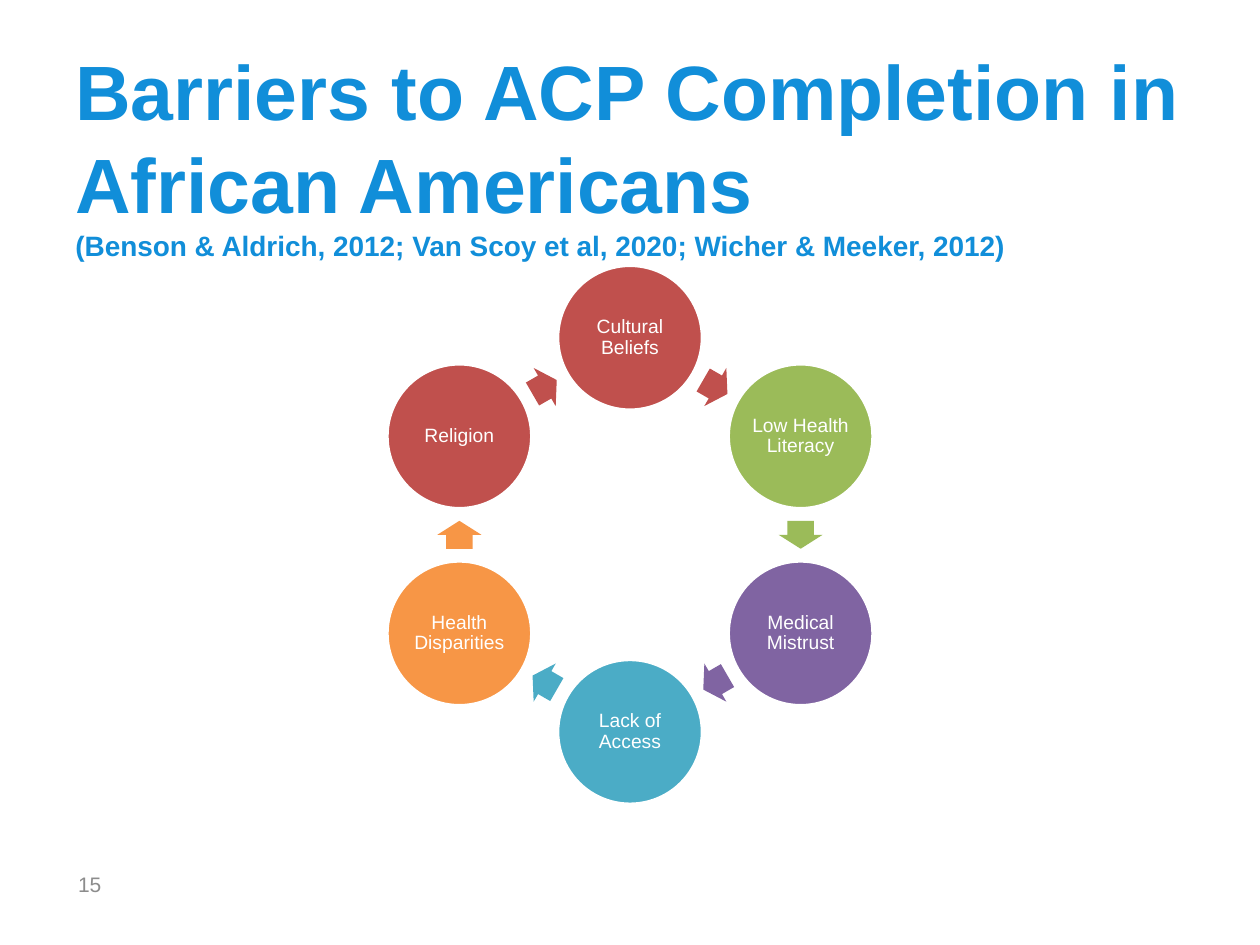
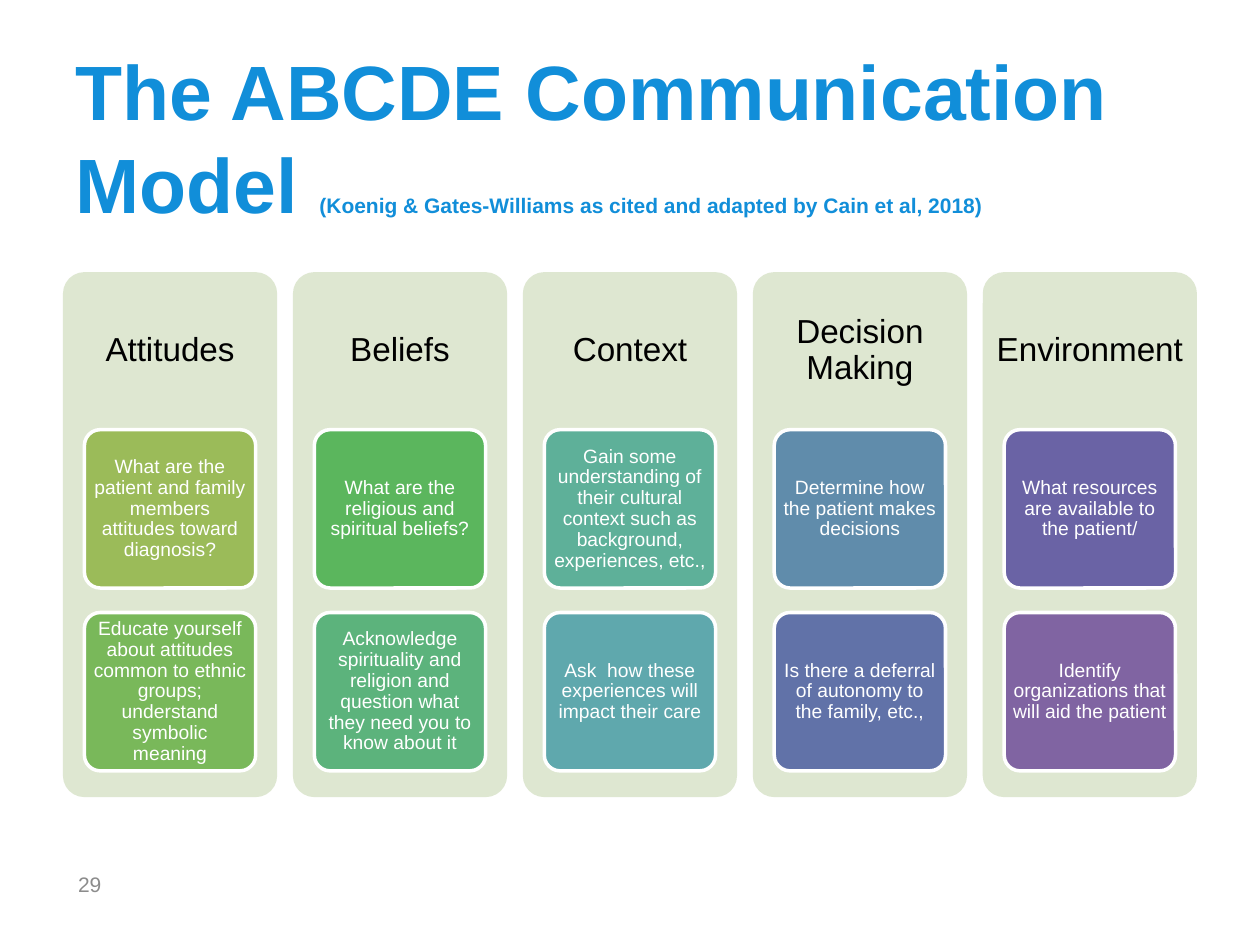
from math import cos, radians, sin

from pptx import Presentation
from pptx.dml.color import RGBColor
from pptx.enum.shapes import MSO_SHAPE
from pptx.enum.text import MSO_ANCHOR, PP_ALIGN
from pptx.util import Pt

ELLIPSE = MSO_SHAPE.OVAL
ARROW = MSO_SHAPE.RIGHT_ARROW
ROUNDED = MSO_SHAPE.ROUNDED_RECTANGLE
TOP, MIDDLE = MSO_ANCHOR.TOP, MSO_ANCHOR.MIDDLE
LEFT, CENTER = PP_ALIGN.LEFT, PP_ALIGN.CENTER

FONT = "Arial"
TITLE_BLUE = "118ED9"
NUMBER_GRAY = "8C8C8C"
COLUMN_GREEN = "DEE7D1"
WHITE, BLACK = "FFFFFF", "000000"

TITLE_BOX = (36, 21.6, 648, 158.4)
NUMBER_BOX = (37.5, 490.5, 37.5, 30)
RING_BOX = (221, 151.6, 278, 308)
COLUMNS_BOX = (36, 155.5, 648, 300)

BARRIERS = [
    ("Cultural Beliefs", "C0504D"),
    ("Low Health Literacy", "9BBB59"),
    ("Medical Mistrust", "8064A2"),
    ("Lack of Access", "4BACC6"),
    ("Health Disparities", "F79646"),
    ("Religion", "C0504D"),
]

ABCDE = [
    ("Attitudes", [
        ("What are the patient and family members attitudes toward diagnosis?", "9BBB59"),
        ("Educate yourself about attitudes common to ethnic groups; "
         "understand symbolic meaning", "79B85A")]),
    ("Beliefs", [
        ("What are the religious and spiritual beliefs?", "5BB65D"),
        ("Acknowledge spirituality and religion and question what "
         "they need you to know about it", "5CB37C")]),
    ("Context", [
        ("Gain some understanding of their cultural context such as "
         "background, experiences, etc.,", "5EB099"),
        ("Ask  how these experiences will impact their care", "5FA8AD")]),
    ("Decision Making", [
        ("Determine how the patient makes decisions", "608CAB"),
        ("Is there a deferral of autonomy to the family, etc.,", "6172A8")]),
    ("Environment", [
        ("What resources are available to the patient/", "6A63A5"),
        ("Identify organizations that will aid the patient", "8064A2")]),
]


def color(hex_string):
    return RGBColor.from_string(hex_string)


def points(box):
    return [Pt(round(length, 2)) for length in box]


def add_run(paragraph, text, size, hex_color, bold=False):
    run = paragraph.add_run()
    run.text = text
    run.font.name = FONT
    run.font.size = Pt(size)
    run.font.bold = bold
    run.font.color.rgb = color(hex_color)


def prepare_text(shape, anchor, align, spacing, insets):
    """Set up the text frame and return its first paragraph."""
    frame = shape.text_frame
    frame.word_wrap = True
    frame.vertical_anchor = anchor
    frame.margin_left = frame.margin_right = Pt(insets[0])
    frame.margin_top = frame.margin_bottom = Pt(insets[1])
    paragraph = frame.paragraphs[0]
    paragraph.alignment = align
    paragraph.line_spacing = spacing
    return paragraph


def add_filled_shape(slide, preset, box, fill, outlined=False):
    shape = slide.shapes.add_shape(preset, *points(box))
    shape.shadow.inherit = False
    shape.fill.solid()
    shape.fill.fore_color.rgb = color(fill)
    if outlined:
        shape.line.color.rgb = color(WHITE)
        shape.line.width = Pt(2)
    else:
        shape.line.fill.background()
    return shape


def add_labelled_shape(slide, preset, box, fill, label, side_inset):
    shape = add_filled_shape(slide, preset, box, fill, outlined=True)
    paragraph = prepare_text(shape, MIDDLE, CENTER, 0.9, (side_inset, 1))
    add_run(paragraph, label, 11, WHITE)
    return shape


def add_title(slide, box, title, citation, citation_size, break_before=False):
    text_box = slide.shapes.add_textbox(*points(box))
    paragraph = prepare_text(text_box, TOP, LEFT, 1.0, (7.2, 3.6))
    add_run(paragraph, title, 44, TITLE_BLUE, bold=True)
    if break_before:
        paragraph.add_line_break()
    add_run(paragraph, citation, citation_size, TITLE_BLUE, bold=True)


def add_slide_number(slide, box, number):
    text_box = slide.shapes.add_textbox(*points(box))
    paragraph = prepare_text(text_box, MIDDLE, LEFT, 1.0, (7.2, 3.6))
    add_run(paragraph, str(number), 12, NUMBER_GRAY)


def add_barrier_ring(slide, box, barriers):
    """Place circles clockwise from the top, with an arrow after each one."""
    left, top, width, height = box
    diameter = 82.8
    arrow_width, arrow_height = 16, 25.2
    radius = (height - diameter) / 2
    step = 360 / len(barriers)
    arrow_radius = radius * cos(radians(step / 2))

    def centered_box(angle, distance, box_width, box_height):
        center_x = left + width / 2 + distance * cos(radians(angle))
        center_y = top + height / 2 + distance * sin(radians(angle))
        return (center_x - box_width / 2, center_y - box_height / 2,
                box_width, box_height)

    for index, (label, fill) in enumerate(barriers):
        angle = index * step - 90
        circle_box = centered_box(angle, radius, diameter, diameter)
        add_labelled_shape(slide, ELLIPSE, circle_box, fill, label, 0.5)
        arrow_angle = angle + step / 2
        arrow_box = centered_box(arrow_angle, arrow_radius, arrow_width, arrow_height)
        arrow = add_filled_shape(slide, ARROW, arrow_box, fill)
        arrow.adjustments[0] = 0.6
        arrow.adjustments[1] = 0.5
        arrow.rotation = arrow_angle + 90


def add_column(slide, box, heading, cards):
    left, top, width, height = box
    column = add_filled_shape(slide, ROUNDED, box, COLUMN_GREEN)
    column.adjustments[0] = 0.1

    heading_height = 0.3 * height
    heading_box = slide.shapes.add_textbox(*points((left, top, width, heading_height)))
    paragraph = prepare_text(heading_box, MIDDLE, CENTER, 0.9, (5.7, 5.7))
    add_run(paragraph, heading, 19, BLACK)

    card_height, card_gap = 90.5, 14
    for index, (text, fill) in enumerate(cards):
        card_top = top + heading_height + index * (card_height + card_gap)
        card_box = (left + 0.1 * width, card_top, 0.8 * width, card_height)
        card = add_labelled_shape(slide, ROUNDED, card_box, fill, text, 2.3)
        card.adjustments[0] = 0.1


def add_columns(slide, box, columns):
    left, top, width, height = box
    gap = 9
    column_width = (width - gap * (len(columns) - 1)) / len(columns)
    for index, (heading, cards) in enumerate(columns):
        column_left = left + index * (column_width + gap)
        add_column(slide, (column_left, top, column_width, height), heading, cards)


def add_blank_slide(presentation, number):
    slide = presentation.slides.add_slide(presentation.slide_layouts[6])
    add_slide_number(slide, NUMBER_BOX, number)
    return slide


def build_barriers_slide(presentation):
    slide = add_blank_slide(presentation, 15)
    add_title(slide, TITLE_BOX, "Barriers to ACP Completion in African Americans",
              "(Benson & Aldrich, 2012; Van Scoy et al, 2020; Wicher & Meeker, 2012)",
              16, break_before=True)
    add_barrier_ring(slide, RING_BOX, BARRIERS)


def build_abcde_slide(presentation):
    slide = add_blank_slide(presentation, 29)
    add_title(slide, TITLE_BOX, "The ABCDE Communication Model ",
              "(Koenig & Gates-Williams as cited and adapted by Cain et al, 2018)", 12)
    add_columns(slide, COLUMNS_BOX, ABCDE)


def main():
    presentation = Presentation()
    presentation.slide_width = Pt(720)
    presentation.slide_height = Pt(540)
    build_barriers_slide(presentation)
    build_abcde_slide(presentation)
    presentation.save("out.pptx")


if __name__ == "__main__":
    main()
